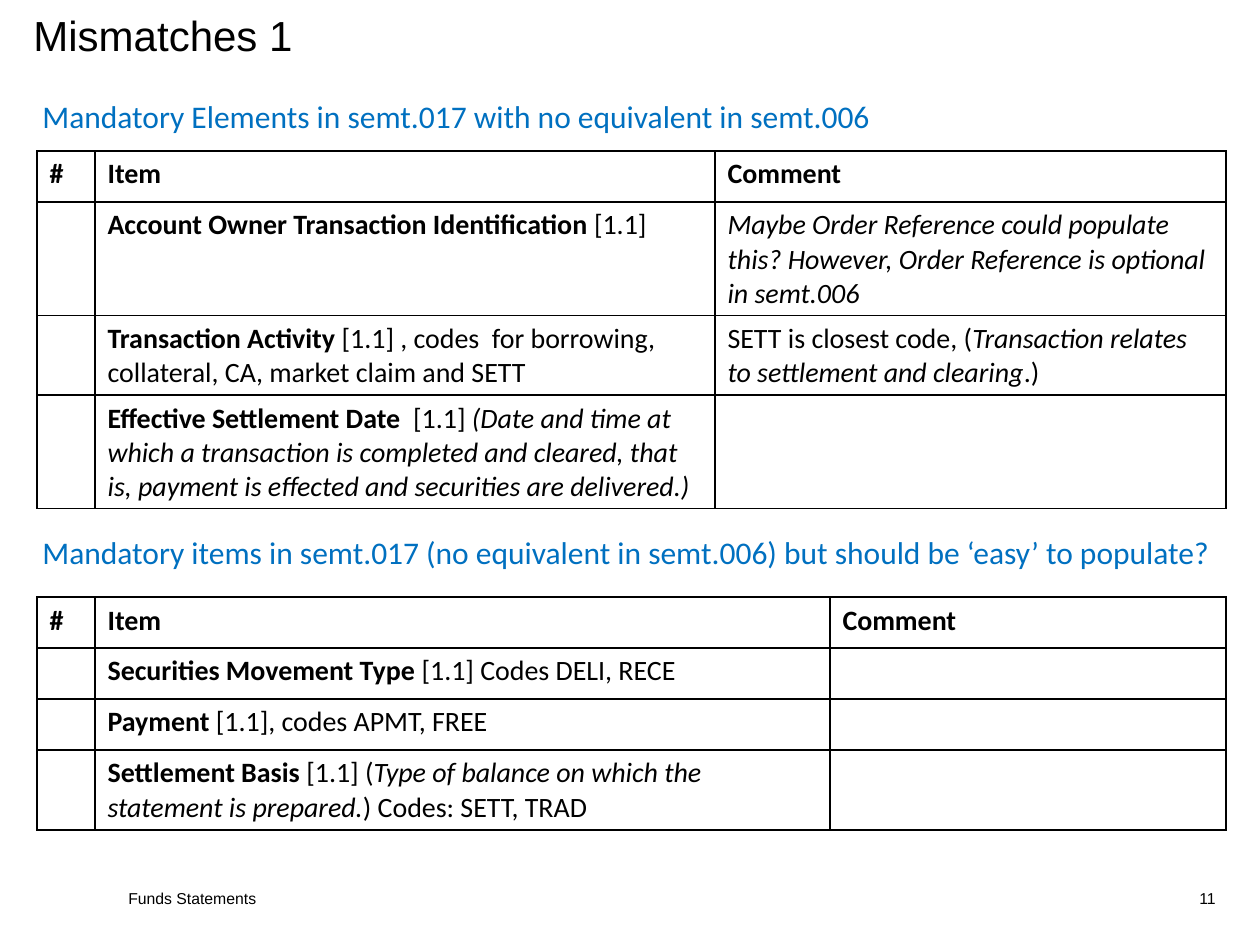
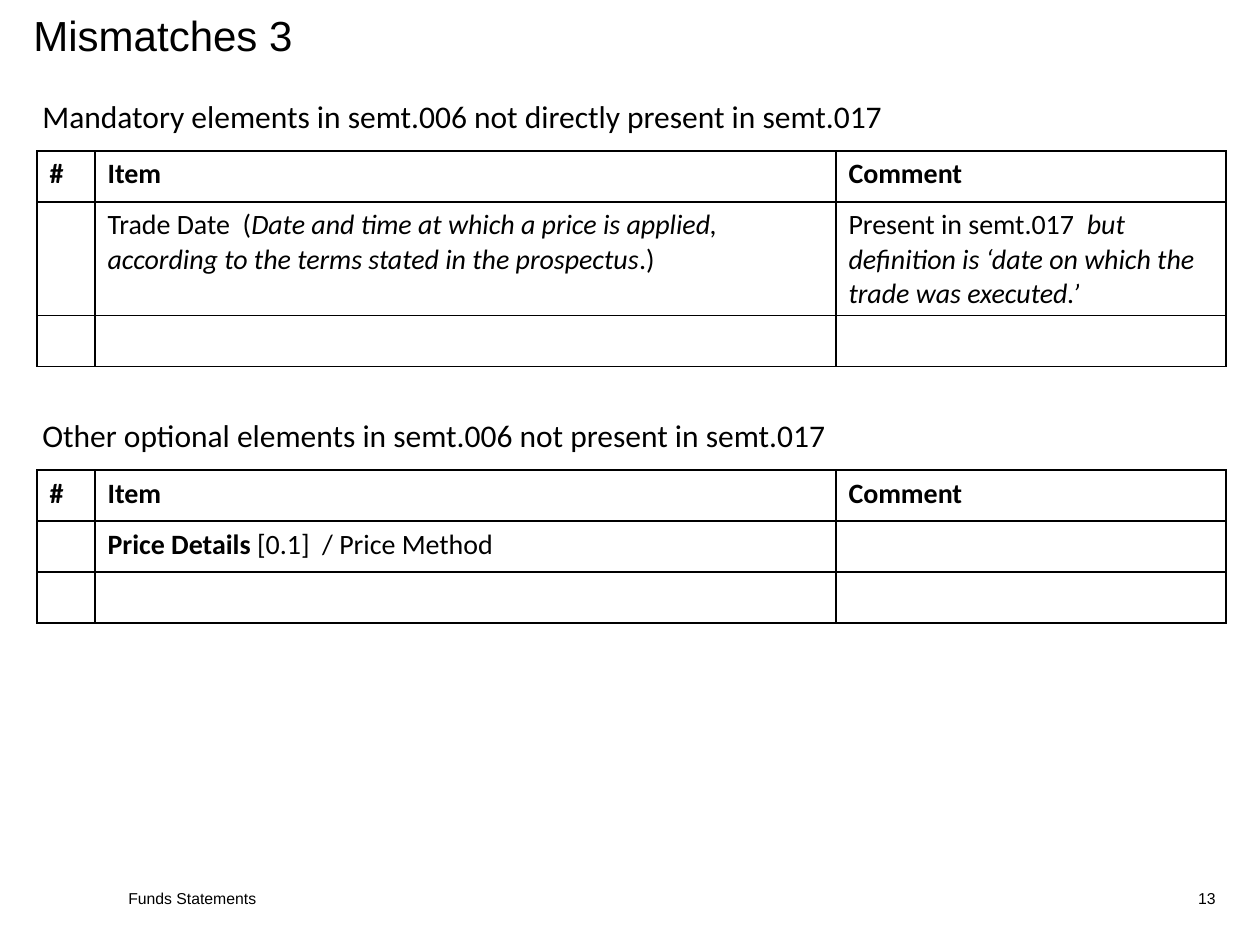
from dataclasses import dataclass
from lxml.etree import SubElement
from pptx import Presentation
from pptx.dml.color import RGBColor as RGB
from pptx.enum.text import MSO_ANCHOR as Anchor, MSO_AUTO_SIZE as Fit, PP_ALIGN as Align
from pptx.oxml.ns import qn
from pptx.util import Emu, Pt


@dataclass(frozen=True)
class Theme:
    ink: str = "000000"
    blue: str = "0070C0"
    sans: str = "Arial"
    body: str = "Calibri"
    title: int = 24
    head: int = 18
    cell: int = 16
    foot: int = 9
    rule: int = 1


T = Theme()
SCALE = 914400 / 126
PAGE = (1260, 945)
LEFT, WIDE = 37, 1189  # table edge and width
NUM, ROW = 58, 51  # number column and least row height
FOOT = "Funds Statements"
HEAD = ["Item", "Comment"]

# A cell is a list of (style, text) runs; style is "b", "i" or "".
SLIDES = [
    {"title": "Mismatches 1", "page": 11, "color": T.blue, "parts": [
        {"head": "Mandatory Elements in semt.017 with no equivalent in semt.006",
         "top": 91, "table": 151, "item": 620, "rows": [
             ([("b", "Account Owner Transaction Identification "), ("", "[1.1]")],
              [("i", "Maybe Order Reference could populate this? However, "
                     "Order Reference is optional in semt.006")]),
             ([("b", "Transaction Activity "),
               ("", "[1.1] , codes  for borrowing, collateral, CA, market claim and SETT")],
              [("", "SETT is closest code, ("),
               ("i", "Transaction relates to settlement and clearing"), ("", ".)")]),
             ([("b", "Effective Settlement Date  "), ("", "[1.1] "),
               ("i", "(Date and time at which a transaction is completed and cleared, "
                     "that is, payment is effected and securities are delivered.)")], []),
         ]},
        {"head": "Mandatory items in semt.017 (no equivalent in semt.006) "
                 "but should be ‘easy’ to populate?",
         "top": 527, "table": 597, "item": 735, "rows": [
             ([("b", "Securities Movement Type "), ("", "[1.1] Codes DELI, RECE")], []),
             ([("b", "Payment"), ("", " [1.1], codes APMT, FREE")], []),
             ([("b", "Settlement Basis "), ("", "[1.1] ("),
               ("i", "Type of balance on which the statement is prepared."),
               ("", ") Codes: SETT, TRAD")], []),
         ]},
    ]},
    {"title": "Mismatches 3", "page": 13, "color": T.ink, "parts": [
        {"head": "Mandatory elements in semt.006 not directly present in semt.017",
         "top": 91, "table": 151, "item": 741, "rows": [
             ([("", "Trade Date  ("),
               ("i", "Date and time at which a price is applied, according to "
                     "the terms stated in the prospectus"), ("", ".)")],
              [("", "Present in semt.017  "),
               ("i", "but definition is ‘date on which the trade was executed.’")]),
             ([], []),
         ]},
        {"head": "Other optional elements in semt.006 not present in semt.017",
         "top": 410, "table": 470, "item": 741, "rows": [
             ([("b", "Price Details "), ("", "[0.1]  / Price Method")], []),
             ([], []),
         ]},
    ]},
]


def px(n):
    return Emu(round(n * SCALE))


def style(para, face, size, color):
    font = para.font
    font.name, font.size = face, Pt(size)
    font.color.rgb = RGB.from_string(color)


def label(slide, text, box, face, size, color=T.ink, anchor=Anchor.MIDDLE, align=None):
    frame = slide.shapes.add_textbox(*map(px, box)).text_frame
    frame.word_wrap = True
    frame.vertical_anchor = anchor
    para = frame.paragraphs[0]
    para.text = text
    para.alignment = align
    style(para, face, size, color)
    return frame


def rule(cell):
    """Draw a line on all four sides of a cell."""
    props = cell._tc.get_or_add_tcPr()
    for side in ("a:lnL", "a:lnR", "a:lnT", "a:lnB"):
        line = SubElement(props, qn(side), w=str(Pt(T.rule)))
        fill = SubElement(line, qn("a:solidFill"))
        SubElement(fill, qn("a:srgbClr"), val=T.ink)


def write(cell, runs):
    rule(cell)
    cell.fill.background()
    para = cell.text_frame.paragraphs[0]
    for kind, text in runs:
        run = para.add_run()
        run.text = text
        run.font.bold = kind == "b"
        run.font.italic = kind == "i"
    style(para, T.body, T.cell, T.ink)


def grid(slide, top, item, rows):
    head = [[("b", name)] for name in ["#", *HEAD]]
    rows = [head] + [[[], *row] for row in rows]
    cols = [NUM, item, WIDE - NUM - item]
    box = map(px, (LEFT, top, WIDE, ROW * len(rows)))
    table = slide.shapes.add_table(len(rows), len(cols), *box).table
    table.first_row = table.horz_banding = False
    for col, width in zip(table.columns, cols):
        col.width = px(width)
    for r, row in enumerate(rows):
        for c, runs in enumerate(row):
            write(table.cell(r, c), runs)


def build(deck, data):
    slide = deck.slides.add_slide(deck.slide_layouts[6])
    label(slide, data["title"], (21, 0, 1226, 70), T.sans, T.title)
    label(slide, FOOT, (116, 882, 782, 32), T.sans, T.foot)
    label(slide, str(data["page"]), (1124, 882, 104, 32), T.sans, T.foot, align=Align.RIGHT)
    for part in data["parts"]:
        frame = label(slide, part["head"], (30, part["top"], 1200, 50),
                      T.body, T.head, data["color"], Anchor.TOP)
        frame.auto_size = Fit.SHAPE_TO_FIT_TEXT
        grid(slide, part["table"], part["item"], part["rows"])


def main():
    deck = Presentation()
    deck.slide_width, deck.slide_height = map(px, PAGE)
    for data in SLIDES:
        build(deck, data)
    deck.save("out.pptx")


if __name__ == "__main__":
    main()
